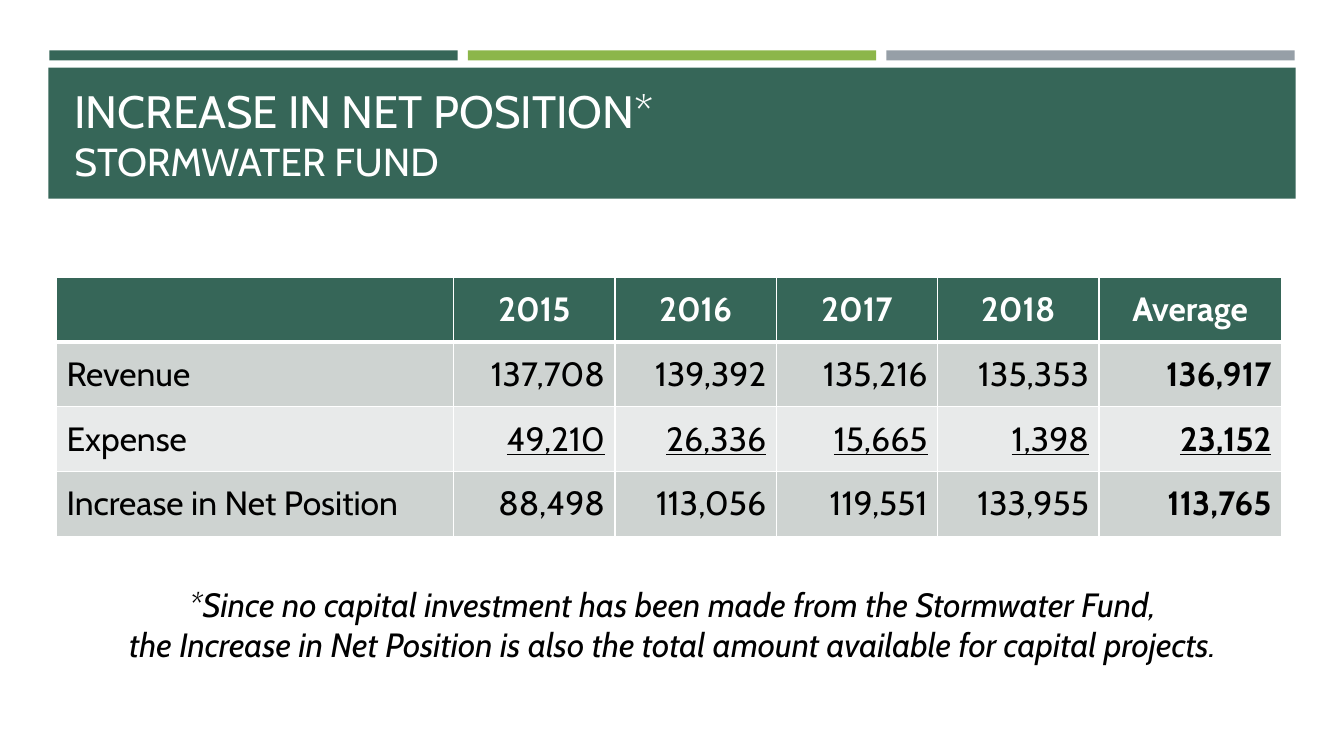
from lxml.etree import SubElement
from pptx import Presentation
from pptx.dml.color import RGBColor
from pptx.enum.shapes import MSO_SHAPE as SHAPE
from pptx.enum.text import MSO_ANCHOR as ANCHOR, PP_ALIGN as ALIGN
from pptx.oxml.ns import qn
from pptx.util import Inches, Pt

# Content
TITLE = [("INCREASE IN NET POSITION*", 32.4), ("STORMWATER FUND", 27.9)]
HEADER = ["", "2015", "2016", "2017", "2018", "Average"]
ROWS = [
    ["Revenue", "137,708", "139,392", "135,216", "135,353", "136,917"],
    ["Expense", "49,210", "26,336", "15,665", "1,398", "23,152"],
    ["Increase in Net Position", "88,498", "113,056", "119,551", "133,955", "113,765"],
]
NOTE = [
    ("*Since no capital investment has been made from the Stormwater Fund,", 24),
    ("the Increase in Net Position is also the total amount available for capital projects.", 24),
]

# Look
FONT = "Cabin"
GREEN = RGBColor(0x36, 0x66, 0x58)
LIME = RGBColor(0x8C, 0xB6, 0x4A)
GRAY = RGBColor(0x96, 0x9F, 0xA7)
BAND_DARK = RGBColor(0xCE, 0xD3, 0xD1)
BAND_LIGHT = RGBColor(0xE8, 0xEA, 0xEA)
WHITE = RGBColor(0xFF, 0xFF, 0xFF)
BLACK = RGBColor(0, 0, 0)

# Grid, in inches
BAR_LEFT, BAR_TOP, BAR_W, BAR_H, BAR_STEP = 0.49, 0.5, 4.05, 0.1, 4.15
COL_WIDTHS = [3.94] + [1.6] * 4 + [1.81]
ROW_H = 2.57 / (len(ROWS) + 1)


def write(tf, lines, color=BLACK, align=ALIGN.LEFT, anchor=None,
          bold=False, italic=False, underline=False):
    """Write (text, size) lines as one paragraph with line breaks."""
    tf.word_wrap = True
    if anchor is not None:
        tf.vertical_anchor = anchor
    p = tf.paragraphs[0]
    p.alignment = align
    for i, (text, size) in enumerate(lines):
        if i:
            p.add_line_break()
        r = p.add_run()
        r.text = text
        f = r.font
        f.name, f.size, f.color.rgb = FONT, Pt(size), color
        f.bold, f.italic, f.underline = bold, italic, underline


def add_bar(s, left, top, width, height, color):
    sp = s.shapes.add_shape(SHAPE.RECTANGLE, *map(Inches, (left, top, width, height)))
    sp.shadow.inherit = False
    sp.fill.solid()
    sp.fill.fore_color.rgb = color
    sp.line.fill.background()


def add_text(s, box, lines, **fmt):
    write(s.shapes.add_textbox(*map(Inches, box)).text_frame, lines, **fmt)


def style_cell(cell, color, top=1, bottom=1):
    """White borders (widths in points) come before the fill in the XML."""
    tc_pr = cell._tc.get_or_add_tcPr()
    for side, width in (("L", 1), ("R", 1), ("T", top), ("B", bottom)):
        ln = SubElement(tc_pr, qn(f"a:ln{side}"), w=str(Pt(width)))
        SubElement(SubElement(ln, qn("a:solidFill")), qn("a:srgbClr"), val=str(WHITE))
    cell.fill.solid()
    cell.fill.fore_color.rgb = color
    cell.vertical_anchor = ANCHOR.MIDDLE


def add_fund_table(s):
    shape = s.shapes.add_table(len(ROWS) + 1, len(HEADER), Inches(0.56), Inches(2.75),
                               Inches(sum(COL_WIDTHS)), Inches(ROW_H * (len(ROWS) + 1)))
    table = shape.table
    for col, width in zip(table.columns, COL_WIDTHS):
        col.width = Inches(width)
    for i, row in enumerate([HEADER] + ROWS):
        table.rows[i].height = Inches(ROW_H)
        for j, text in enumerate(row):
            cell = table.cell(i, j)
            if i == 0:
                style_cell(cell, GREEN, bottom=3)
                fmt = dict(color=WHITE, align=ALIGN.CENTER, bold=True)
            else:
                style_cell(cell, BAND_DARK if i % 2 else BAND_LIGHT, top=3 if i == 1 else 1)
                fmt = dict(align=ALIGN.RIGHT if j else ALIGN.LEFT,
                           bold=j == len(HEADER) - 1,
                           underline=row[0] == "Expense" and j > 0)
            write(cell.text_frame, [(text, 24)], **fmt)


def main():
    prs = Presentation()
    prs.slide_width, prs.slide_height = Inches(13.33), Inches(7.5)
    s = prs.slides.add_slide(prs.slide_layouts[6])

    # Top bars and title band
    for i, color in enumerate([GREEN, LIME, GRAY]):
        add_bar(s, BAR_LEFT + i * BAR_STEP, BAR_TOP, BAR_W, BAR_H, color)
    add_bar(s, 0.48, 0.67, 12.37, 1.3, GREEN)
    add_text(s, (0.64, 0.77, 12.06, 1.11), TITLE, color=WHITE, anchor=ANCHOR.BOTTOM)

    # Table and footnote
    add_fund_table(s)
    add_text(s, (1.03, 5.74, 11.28, 0.91), NOTE, align=ALIGN.CENTER, italic=True)

    prs.save("out.pptx")


if __name__ == "__main__":
    main()
